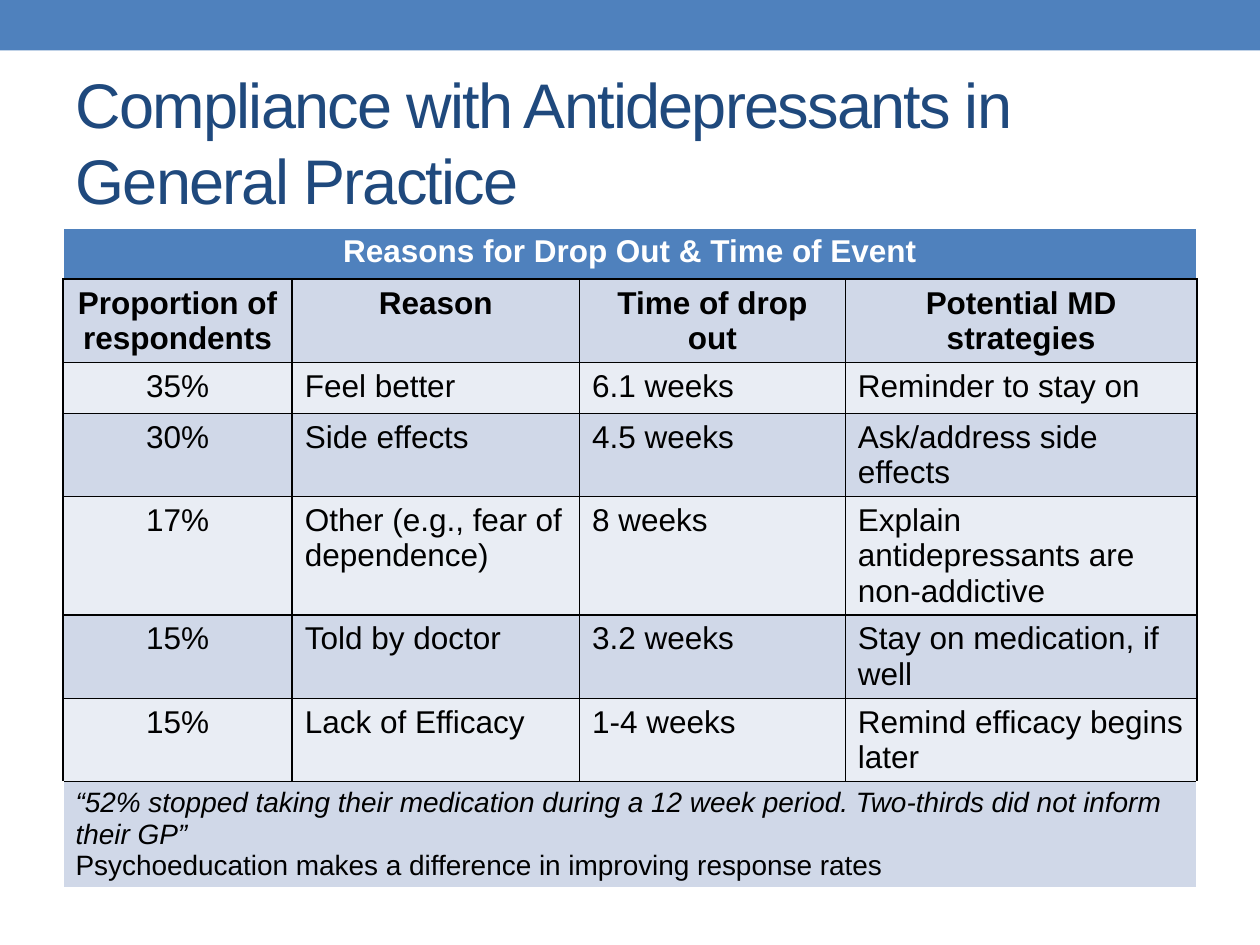
from lxml import etree
from pptx import Presentation
from pptx.dml import color
from pptx.enum import shapes, text
from pptx.oxml import ns
from pptx.util import Pt

BLUE, NAVY, BLACK, WHITE = "4F81BD", "1F497D", "000000", "FFFFFF"
BANDS = ["E9EDF4", "D0D8E8"]
TITLE = "Compliance with Antidepressants in General Practice"
CAPTION = "Reasons for Drop Out & Time of Event"
HEADINGS = ["Proportion of respondents", "Reason", "Time of drop out", "Potential MD strategies"]
REASONS = [
    ["35%", "Feel better", "6.1 weeks", "Reminder to stay on"],
    ["30%", "Side effects", "4.5 weeks", "Ask/address side effects"],
    ["17%", "Other (e.g., fear of dependence)", "8 weeks", "Explain antidepressants are non-addictive"],
    ["15%", "Told by doctor", "3.2 weeks", "Stay on medication, if well"],
    ["15%", "Lack of Efficacy", "1-4 weeks", "Remind efficacy begins later"],
]
QUOTE = "“52% stopped taking their medication during a 12 week period. Two-thirds did not inform their GP”"
CONCLUSION = "Psychoeducation makes a difference in improving response rates"
COLUMN_WIDTHS = [131, 164.2, 151.9, 200.9]
ROW_HEIGHT = 29.2


def paint(target, hex_color):
    target.solid()
    target.fore_color.rgb = color.RGBColor.from_string(hex_color)


def add_run(paragraph, words, size, hex_color=BLACK, bold=False, italic=False):
    run = paragraph.add_run()
    run.text = words
    run.font.name = "Arial"
    run.font.size = Pt(size)
    run.font.bold = bold
    run.font.italic = italic
    paint(run.font.fill, hex_color)
    return run


def set_borders(cell, left=BLACK, right=BLACK, top=BLACK, bottom=BLACK):
    properties = cell._tc.get_or_add_tcPr()
    for side, hex_color in zip("LRTB", (left, right, top, bottom)):
        line = etree.SubElement(properties, ns.qn(f"a:ln{side}"), w=str(Pt(1)))
        fill = etree.SubElement(line, ns.qn("a:solidFill"))
        etree.SubElement(fill, ns.qn("a:srgbClr"), val=hex_color)


def add_wide_row(table, row, fill, **borders):
    cells = list(table.rows[row].cells)
    cells[0].merge(cells[-1])
    for cell in cells:
        set_borders(cell, left=WHITE, right=WHITE, **borders)
        paint(cell.fill, fill)
    return cells[0].text_frame


def add_bar(slide, width):
    bar = slide.shapes.add_shape(shapes.MSO_SHAPE.RECTANGLE, 0, 0, width, Pt(28.8))
    bar.shadow.inherit = False
    paint(bar.fill, BLUE)
    bar.line.fill.background()


def add_title(slide):
    title = slide.shapes.title
    title.left, title.top, title.width, title.height = Pt(36), Pt(41.8), Pt(648), Pt(77.8)
    frame = title.text_frame
    frame.word_wrap = True
    frame.auto_size = text.MSO_AUTO_SIZE.NONE
    frame.vertical_anchor = text.MSO_ANCHOR.MIDDLE
    paragraph = frame.paragraphs[0]
    paragraph.alignment = text.PP_ALIGN.LEFT
    run = add_run(paragraph, TITLE, 36, NAVY)
    run.font._element.set("spc", "-100")


def add_reasons_table(slide):
    body = [HEADINGS] + REASONS
    row_count = len(body) + 2
    table = slide.shapes.add_table(
        row_count, len(HEADINGS), Pt(36), Pt(130.3),
        Pt(sum(COLUMN_WIDTHS)), Pt(ROW_HEIGHT * row_count)).table
    for column, width in zip(table.columns, COLUMN_WIDTHS):
        column.width = Pt(width)

    caption = add_wide_row(table, 0, BLUE, top=WHITE).paragraphs[0]
    caption.alignment = text.PP_ALIGN.CENTER
    add_run(caption, CAPTION, 18, WHITE, bold=True)

    for row, entries in enumerate(body, 1):
        heading = row == 1
        for column, words in enumerate(entries):
            cell = table.cell(row, column)
            set_borders(cell)
            paint(cell.fill, BANDS[row % 2])
            paragraph = cell.text_frame.paragraphs[0]
            if heading or column == 0:
                paragraph.alignment = text.PP_ALIGN.CENTER
            add_run(paragraph, words, 18, bold=heading)

    footer = add_wide_row(table, row_count - 1, BANDS[1], bottom=WHITE)
    add_run(footer.paragraphs[0], QUOTE, 16, italic=True)
    add_run(footer.add_paragraph(), CONCLUSION, 16)


def main():
    presentation = Presentation()
    presentation.slide_width, presentation.slide_height = Pt(720), Pt(540)
    slide = presentation.slides.add_slide(presentation.slide_layouts[5])
    add_bar(slide, presentation.slide_width)
    add_title(slide)
    add_reasons_table(slide)
    presentation.save("out.pptx")


if __name__ == "__main__":
    main()
